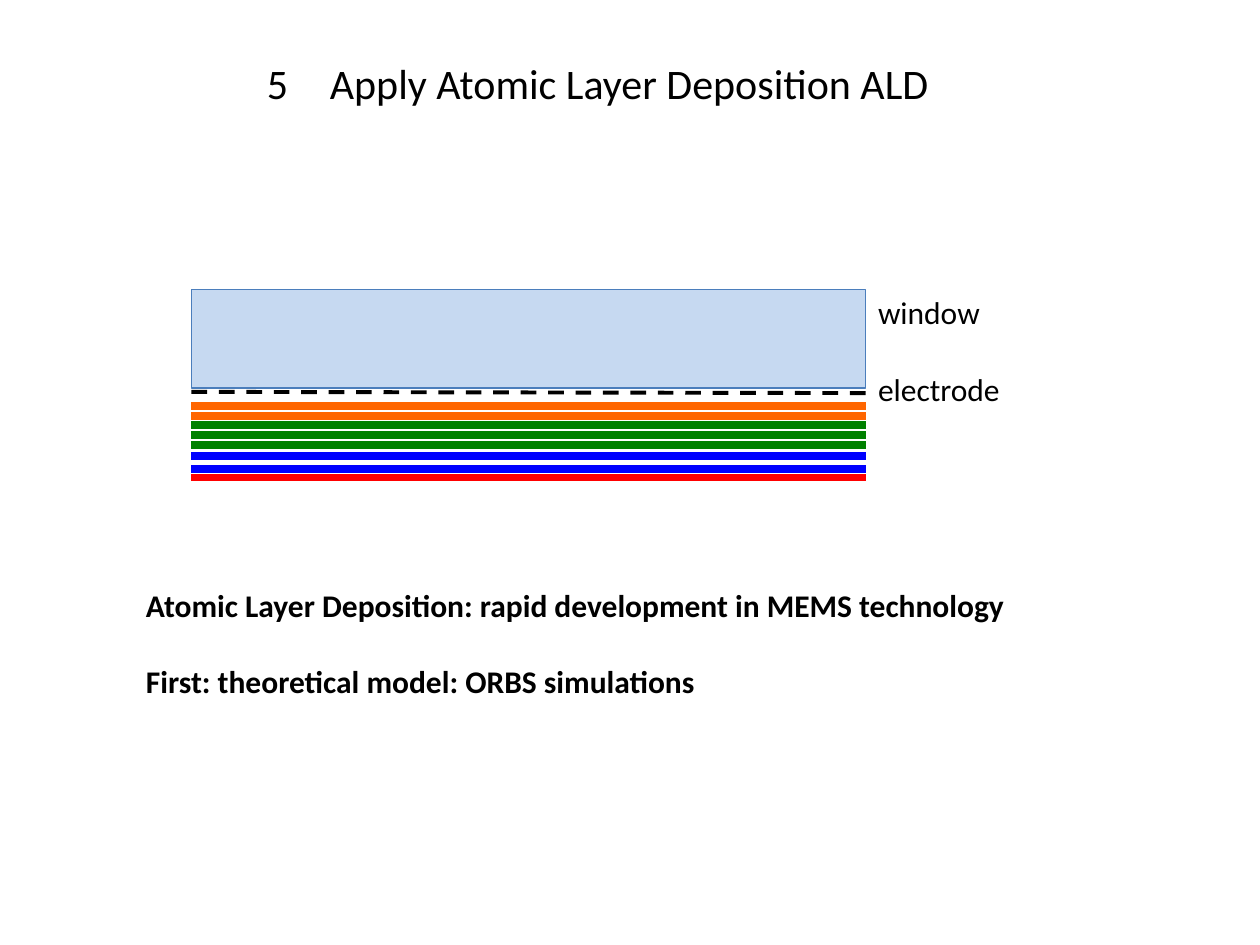
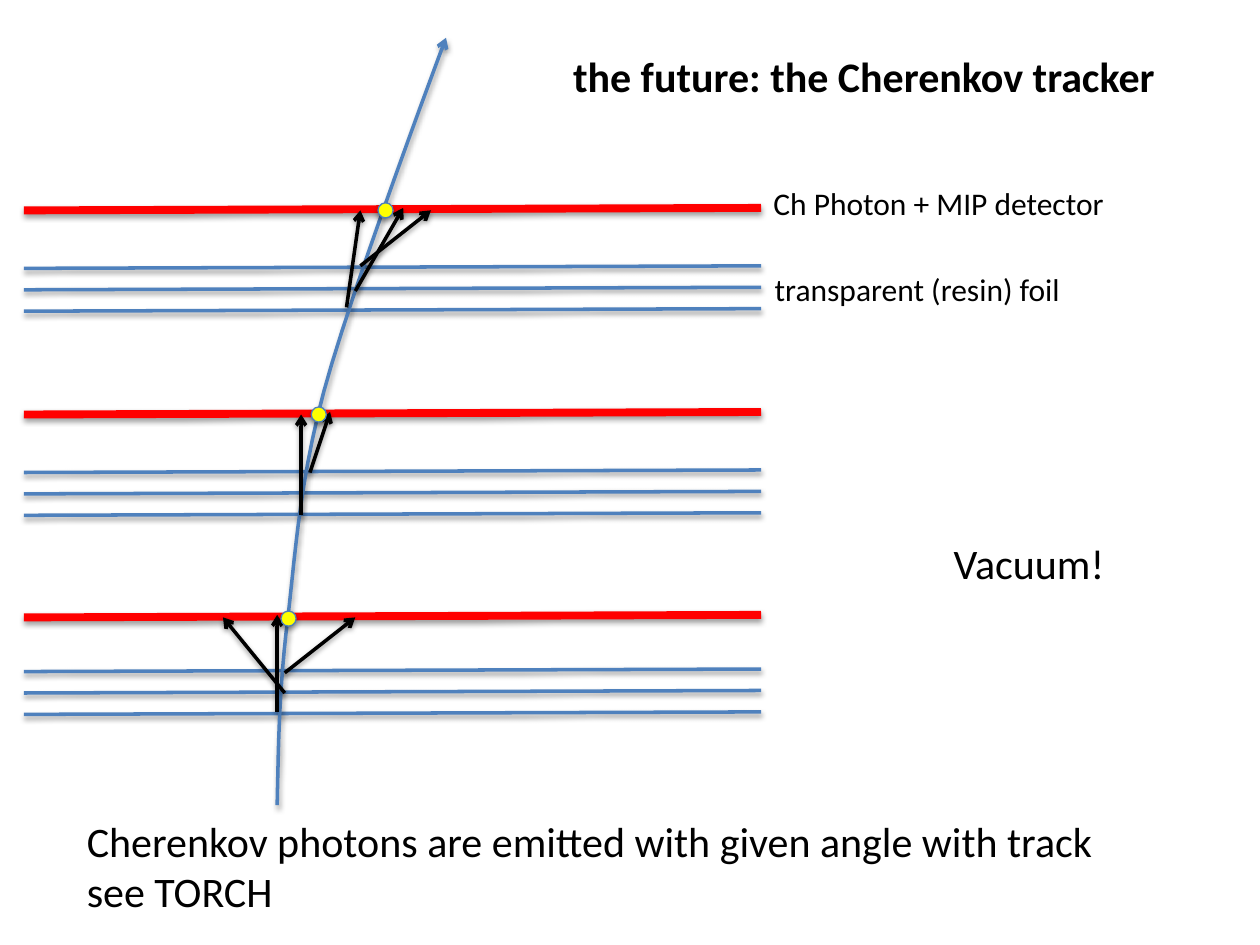
from lxml import etree
from pptx import Presentation
from pptx.dml.color import RGBColor
from pptx.enum import dml, shapes, text
from pptx.oxml import ns
from pptx.util import Inches, Pt

FONT = "Calibri"
COLOURS = {
    "text": "000000", "window": "C6D9F1", "outline": "4B7EBC", "foil": "4F81BD",
    "orange": "FF6600", "green": "008000", "blue": "0000FF", "red": "FF0000",
    "hit": "FFFF00",
}

# Slide 1: (left, top, width, height), size, bold, paragraphs
TITLE_TABS = (0.5, 1.0)
DEPOSITION_TITLE = ((1.52, 0.41, 6.03, 0.5), 24, False, ["\t5\tApply Atomic Layer Deposition ALD"])
DEPOSITION_TEXTS = [
    ((1.06, 4.6, 7.13, 1.01), 18, True,
     ["Atomic Layer Deposition: rapid development in MEMS technology",
      "First: theoretical model: ORBS simulations"]),
    ((6.87, 2.28, 1.18, 1.31), 18, False, ["window", "electrode"]),
]
STACK_LEFT, STACK_RIGHT = 1.52, 6.87
WINDOW_TOP, WINDOW_HEIGHT = 2.3, 0.78
ELECTRODE = (STACK_LEFT, 3.11), (STACK_RIGHT, 3.12)
LAYERS = [
    ("orange", 3.22), ("orange", 3.3), ("green", 3.37), ("green", 3.45),
    ("green", 3.53), ("blue", 3.62), ("blue", 3.72), ("red", 3.79),
]

# Slide 2
PLANE_LEFT, PLANE_RIGHT, PLANE_RISE = 0.19, 6.04, 0.02
FOILS_PER_STATION, FOIL_GAP = 3, 0.17
HIT_SIZE = 0.12
STATIONS = [
    {"detector": 1.67, "first_foil": 2.13, "hit": (3.0, 1.61),
     "photons": [((2.86, 2.11), (3.42, 1.67)), ((2.75, 2.44), (2.86, 1.67)),
                 ((2.82, 2.31), (3.2, 1.65))]},
    {"detector": 3.29, "first_foil": 3.75, "hit": (2.47, 3.23),
     "photons": [((2.46, 3.75), (2.62, 3.27)), ((2.39, 4.09), (2.39, 3.29))]},
    {"detector": 4.9, "first_foil": 5.33, "hit": (2.23, 4.85),
     "photons": [((2.26, 5.5), (1.77, 4.9)), ((2.26, 5.34), (2.82, 4.9)),
                 ((2.2, 5.65), (2.2, 4.88))]},
]
TRACK_CURVES = [
    ((2.2, 6.39), (2.21, 5.99), (2.21, 5.58), (2.27, 5.03)),
    ((2.27, 5.03), (2.34, 4.49), (2.36, 3.9), (2.57, 3.11)),
    ((2.57, 3.11), (2.78, 2.32), (3.54, 0.3), (3.54, 0.3)),
]
CURVE_STEPS = 12
TRACKER_TEXTS = [
    ((6.04, 1.41, 2.86, 0.4), 18, False, ["Ch Photon + MIP detector"]),
    ((6.05, 2.09, 2.59, 0.4), 18, False, ["transparent (resin) foil"]),
    ((7.47, 4.22, 1.43, 0.5), 24, False, ["Vacuum!"]),
    ((4.45, 0.35, 4.9, 0.5), 24, True, ["the future: the Cherenkov tracker"]),
    ((0.59, 6.42, 8.31, 0.91), 24, False,
     ["Cherenkov photons are emitted with given angle with track", "see TORCH"]),
]


def rgb(name):
    return RGBColor.from_string(COLOURS[name])


def child(parent, tag, **attributes):
    return etree.SubElement(parent, ns.qn(tag), {k: str(v) for k, v in attributes.items()})


def set_effects(shape, shadow, alpha=38, distance=1.6):
    """Replace the theme shadow by none or by a soft shadow straight below."""
    effects = child(shape._element.spPr, "a:effectLst")
    if shadow:
        outer = child(effects, "a:outerShdw", blurRad=Pt(3.1), dist=Pt(distance),
                      dir=90 * 60000, rotWithShape=0)
        child(child(outer, "a:srgbClr", val=COLOURS["text"]), "a:alpha", val=alpha * 1000)


def style_line(shape, colour, width, arrow=False, dash=None):
    shape.line.color.rgb = rgb(colour)
    shape.line.width = Pt(width)
    if dash:
        shape.line.dash_style = dash
    if arrow:
        child(shape.line._get_or_add_ln(), "a:tailEnd", type="arrow")


def add_line(slide, start, end, colour, width, shadow=False, arrow=False, dash=None):
    line = slide.shapes.add_connector(
        shapes.MSO_CONNECTOR.STRAIGHT, *(Inches(v) for v in (*start, *end)))
    style_line(line, colour, width, arrow, dash)
    set_effects(line, shadow)


def add_filled(slide, preset, box, fill):
    shape = slide.shapes.add_shape(preset, *map(Inches, box))
    shape.fill.solid()
    shape.fill.fore_color.rgb = rgb(fill)
    style_line(shape, "outline", 0.75)
    return shape


def add_text(slide, box, size, bold, paragraphs, gap=0, tabs=()):
    frame = slide.shapes.add_textbox(*map(Inches, box)).text_frame
    frame.word_wrap = False
    frame.auto_size = text.MSO_AUTO_SIZE.SHAPE_TO_FIT_TEXT
    for i, words in enumerate(paragraphs):
        paragraph = frame.add_paragraph() if i else frame.paragraphs[0]
        if i and gap:
            paragraph.space_before = Pt(gap)
        if tabs:
            stops = child(paragraph._p.get_or_add_pPr(), "a:tabLst")
            for stop in tabs:
                child(stops, "a:tab", pos=Inches(stop), algn="l")
        run = paragraph.add_run()
        run.text = words
        run.font.name = FONT
        run.font.size = Pt(size)
        run.font.bold = bold
        run.font.color.rgb = rgb("text")


def add_plane(slide, y, colour, width):
    add_line(slide, (PLANE_LEFT, y), (PLANE_RIGHT, y - PLANE_RISE), colour, width, shadow=True)


def bezier_point(curve, t):
    weights = ((1 - t) ** 3, 3 * t * (1 - t) ** 2, 3 * t ** 2 * (1 - t), t ** 3)
    return tuple(Inches(sum(w * p[axis] for w, p in zip(weights, curve))) for axis in (0, 1))


def add_track(slide):
    points = [bezier_point(curve, step / CURVE_STEPS)
              for curve in TRACK_CURVES for step in range(1, CURVE_STEPS + 1)]
    builder = slide.shapes.build_freeform(*map(Inches, TRACK_CURVES[0][0]))
    builder.add_line_segments(points, close=False)
    track = builder.convert_to_shape()
    track.fill.background()
    style_line(track, "foil", 2, arrow=True)
    set_effects(track, True)


def build_deposition(slide):
    add_text(slide, *DEPOSITION_TITLE, tabs=TITLE_TABS)
    add_line(slide, *ELECTRODE, "text", 2.25, dash=dml.MSO_LINE.DASH)
    window = add_filled(slide, shapes.MSO_SHAPE.RECTANGLE,
                        (STACK_LEFT, WINDOW_TOP, STACK_RIGHT - STACK_LEFT, WINDOW_HEIGHT),
                        "window")
    set_effects(window, False)
    for colour, y in LAYERS:
        add_line(slide, (STACK_LEFT, y), (STACK_RIGHT, y), colour, 4.5)
    for label in DEPOSITION_TEXTS:
        add_text(slide, *label, gap=22)


def build_tracker(slide):
    for station in STATIONS:
        for i in range(FOILS_PER_STATION):
            add_plane(slide, station["first_foil"] + i * FOIL_GAP, "foil", 2)
    add_track(slide)
    for station in STATIONS:
        add_plane(slide, station["detector"], "red", 4.5)
        for start, end in station["photons"]:
            add_line(slide, start, end, "text", 2, shadow=True, arrow=True)
        hit = add_filled(slide, shapes.MSO_SHAPE.OVAL,
                         (*station["hit"], HIT_SIZE, HIT_SIZE), "hit")
        set_effects(hit, True, alpha=35, distance=1.8)
    for label in TRACKER_TEXTS:
        add_text(slide, *label)


def main():
    deck = Presentation()
    deck.slide_width, deck.slide_height = Inches(10), Inches(7.5)
    for build in (build_deposition, build_tracker):
        build(deck.slides.add_slide(deck.slide_layouts[6]))
    deck.save("out.pptx")


if __name__ == "__main__":
    main()
